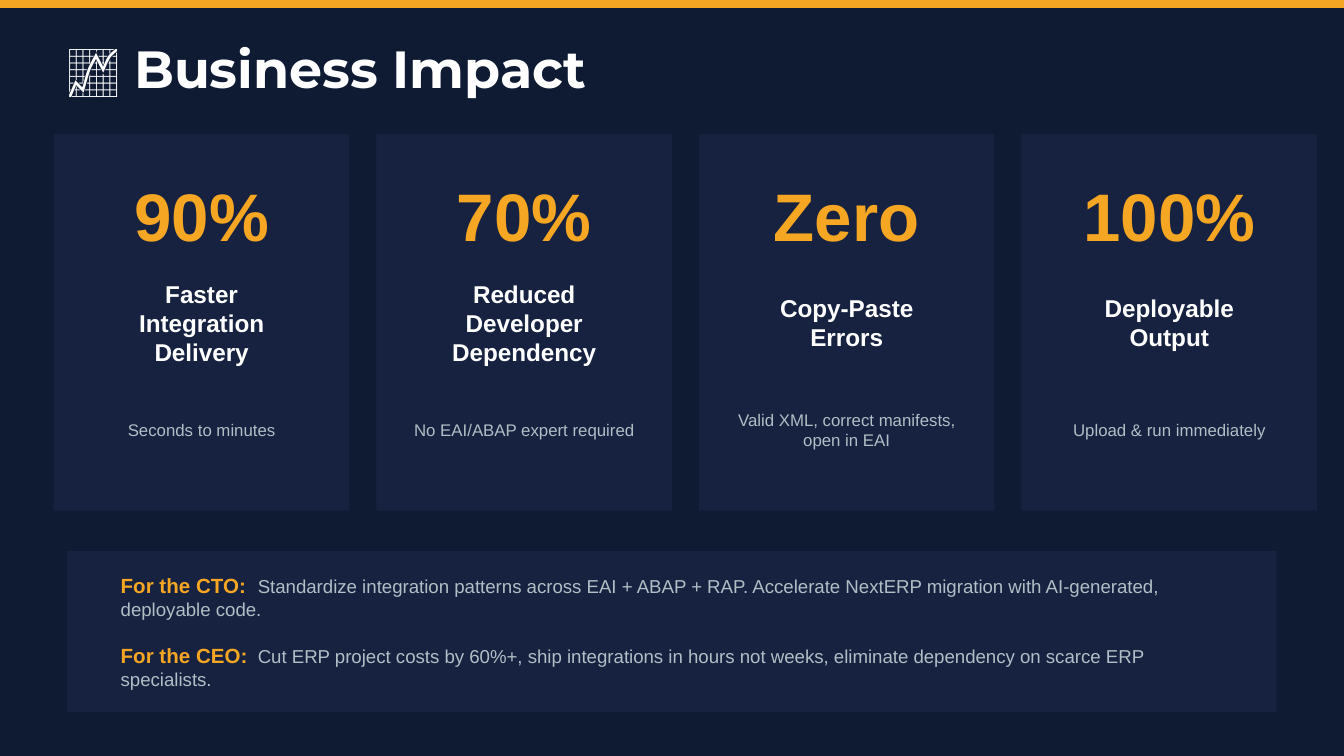
from lxml.etree import SubElement
from pptx import Presentation
from pptx.dml.color import RGBColor
from pptx.enum.shapes import MSO_SHAPE
from pptx.enum.text import MSO_ANCHOR, MSO_AUTO_SIZE, PP_ALIGN
from pptx.oxml.ns import qn
from pptx.util import Inches, Pt

COLORS = {
    "background": "0F1B33",
    "panel": "162240",
    "accent": "F5A623",
    "white": "FFFFFF",
    "muted": "B0BEC5",
}
CELL = 0.1
COLS = 100
ROWS = COLS * 9 / 16

METRICS = [
    ("90%", ["Faster", "Integration", "Delivery"], ["Seconds to minutes"]),
    ("70%", ["Reduced", "Developer", "Dependency"], ["No EAI/ABAP expert required"]),
    ("Zero", ["Copy-Paste", "Errors"], ["Valid XML, correct manifests,", "open in EAI"]),
    ("100%", ["Deployable", "Output"], ["Upload & run immediately"]),
]
MESSAGES = [
    ("For the CTO:", "Standardize integration patterns across EAI + ABAP + RAP. "
     "Accelerate NextERP migration with AI-generated, deployable code."),
    ("For the CEO:", "Cut ERP project costs by 60%+, ship integrations in hours not weeks, "
     "eliminate dependency on scarce ERP specialists."),
]


def color(name):
    return RGBColor.from_string(COLORS[name])


def add_text(p, text, size=10, fill="white", bold=False, font="Arial"):
    r = p.add_run()
    r.text = text
    r.font.size = Pt(size)
    r.font.name = font
    r.font.bold = bold
    r.font.color.rgb = color(fill)


class ImpactSlide:
    def __init__(self, prs):
        self.s = prs.slides.add_slide(prs.slide_layouts[5])
        self.s.background.fill.solid()
        self.s.background.fill.fore_color.rgb = color("background")

    def box(self, col, row, cols, rows):
        return [Inches(n * CELL) for n in (col, row, cols, rows)]

    def frame(self, sp):
        tf = sp.text_frame
        tf.word_wrap = True
        tf.auto_size = MSO_AUTO_SIZE.NONE
        tf.vertical_anchor = MSO_ANCHOR.MIDDLE
        return tf

    def title(self, text, *area):
        sp = self.s.shapes.title
        sp.left, sp.top, sp.width, sp.height = self.box(*area)
        tf = self.frame(sp)
        tf.margin_left = tf.margin_right = tf.margin_top = tf.margin_bottom = 0
        p = tf.paragraphs[0]
        p.alignment = PP_ALIGN.LEFT
        add_text(p, text, size=28, bold=True, font="Montserrat")

    def panel(self, *area, fill="panel"):
        sp = self.s.shapes.add_shape(MSO_SHAPE.RECTANGLE, *self.box(*area))
        sp.shadow.inherit = False
        sp.fill.solid()
        sp.fill.fore_color.rgb = color(fill)
        sp.line.fill.background()

    def label(self, lines, *area, **style):
        tf = self.frame(self.s.shapes.add_textbox(*self.box(*area)))
        for i, line in enumerate(lines):
            p = tf.add_paragraph() if i else tf.paragraphs[0]
            p.alignment = PP_ALIGN.CENTER
            add_text(p, line, **style)

    def card(self, col, value, name, detail):
        self.panel(col, 10, 22, 28)
        self.label([value], col, 12, 22, 8, size=36, fill="accent", bold=True)
        self.label(name, col, 20, 22, 8, size=13, bold=True)
        self.label(detail, col, 28.5, 22, 7, size=9, fill="muted")

    def messages(self, items, *area):
        tf = self.frame(self.s.shapes.add_textbox(*self.box(*area)))
        for i, (audience, message) in enumerate(items):
            p = tf.add_paragraph() if i else tf.paragraphs[0]
            if i:
                p.space_before = Pt(12)
            tabs = SubElement(p._p.get_or_add_pPr(), qn("a:tabLst"))
            SubElement(tabs, qn("a:tab"), pos=str(Inches(1.02)), algn="l")
            add_text(p, audience + "\t", size=11, fill="accent", bold=True)
            add_text(p, message, fill="muted")


def main():
    prs = Presentation()
    prs.slide_width = Inches(COLS * CELL)
    prs.slide_height = Inches(ROWS * CELL)
    slide = ImpactSlide(prs)
    slide.panel(0, 0, COLS, 0.6, fill="accent")
    slide.title("📈 Business Impact", 5, 2, 80, 6)
    for i, metric in enumerate(METRICS):
        slide.card(4 + 24 * i, *metric)
    slide.panel(5, 41, 90, 12)
    slide.messages(MESSAGES, 8, 42, 84, 10)
    prs.save("out.pptx")


if __name__ == "__main__":
    main()
